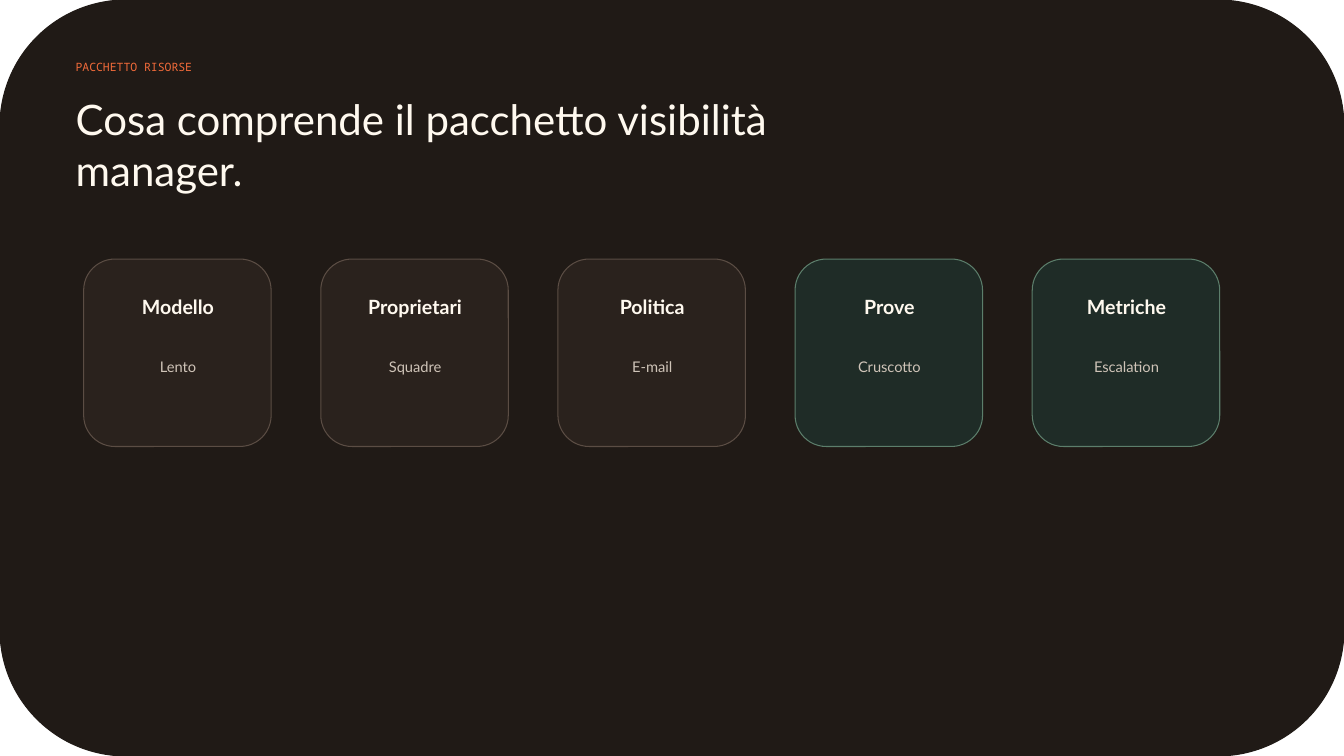
"""Build the slide listing the parts of the manager visibility pack."""
from pptx import Presentation
from pptx.dml.color import RGBColor
from pptx.enum.shapes import MSO_SHAPE
from pptx.enum.text import MSO_ANCHOR, MSO_AUTO_SIZE, PP_ALIGN
from pptx.util import Inches, Pt

NIGHT = RGBColor(0x20, 0x1A, 0x16)
CREAM = RGBColor(0xFF, 0xF9, 0xEF)
SAND = RGBColor(0xCF, 0xC4, 0xB8)
ORANGE = RGBColor(0xF2, 0x6B, 0x3A)
BROWN = RGBColor(0x2A, 0x22, 0x1D)
TAUPE = RGBColor(0x5B, 0x4D, 0x44)
GREEN = RGBColor(0x1F, 0x2C, 0x27)
SAGE = RGBColor(0x5C, 0x7E, 0x6B)

deck = Presentation()
deck.slide_width, deck.slide_height = Inches(13.33), Inches(7.5)
slide = deck.slides.add_slide(deck.slide_layouts[5])
shapes = slide.shapes


def panel(left, top, width, height, fill, line):
    box = shapes.add_shape(MSO_SHAPE.ROUNDED_RECTANGLE, Inches(left),
                           Inches(top), Inches(width), Inches(height))
    box.shadow.inherit = False
    box.fill.solid()
    box.fill.fore_color.rgb = fill
    box.line.color.rgb = line
    box.line.width = Pt(0.75)
    return box


def write(box, text, size, color, font="Lato", bold=False, align=PP_ALIGN.LEFT):
    frame = box.text_frame
    frame.word_wrap = True
    frame.auto_size = MSO_AUTO_SIZE.NONE
    frame.vertical_anchor = MSO_ANCHOR.TOP
    frame.margin_left = frame.margin_right = 0
    frame.margin_top = frame.margin_bottom = 0
    line = frame.paragraphs[0]
    line.alignment = align
    run = line.add_run()
    run.text = text
    run.font.name = font
    run.font.size = Pt(size)
    run.font.bold = bold
    run.font.color.rgb = color


title = shapes.title
title.left, title.top = Inches(0.75), Inches(0.93)
title.width, title.height = Inches(8.31), Inches(0.71)
write(title, "Cosa comprende il pacchetto visibilità manager.", 30, CREAM)

back = panel(0, 0, 13.33, 7.5, NIGHT, NIGHT)
back.line.width = 0
title.element.addprevious(back.element)

label = shapes.add_textbox(Inches(0.75), Inches(0.6), Inches(4.59), Inches(0.28))
write(label, "PACCHETTO RISORSE", 8.2, ORANGE, "Noto Sans Mono")

cards = [
    ("Modello", "Lento", BROWN, TAUPE),
    ("Proprietari", "Squadre", BROWN, TAUPE),
    ("Politica", "E-mail", BROWN, TAUPE),
    ("Prove", "Cruscotto", GREEN, SAGE),
    ("Metriche", "Escalation", GREEN, SAGE),
]
for i, (name, note, fill, line) in enumerate(cards):
    left = 0.83 + i * 2.352
    panel(left, 2.57, 1.86, 1.86, fill, line)
    head = shapes.add_textbox(Inches(left + 0.19), Inches(2.93),
                              Inches(1.49), Inches(0.33))
    write(head, name, 14, CREAM, bold=True, align=PP_ALIGN.CENTER)
    body = shapes.add_textbox(Inches(left + 0.16), Inches(3.55),
                              Inches(1.55), Inches(0.57))
    write(body, note, 10.5, SAND, align=PP_ALIGN.CENTER)

deck.save("out.pptx")
